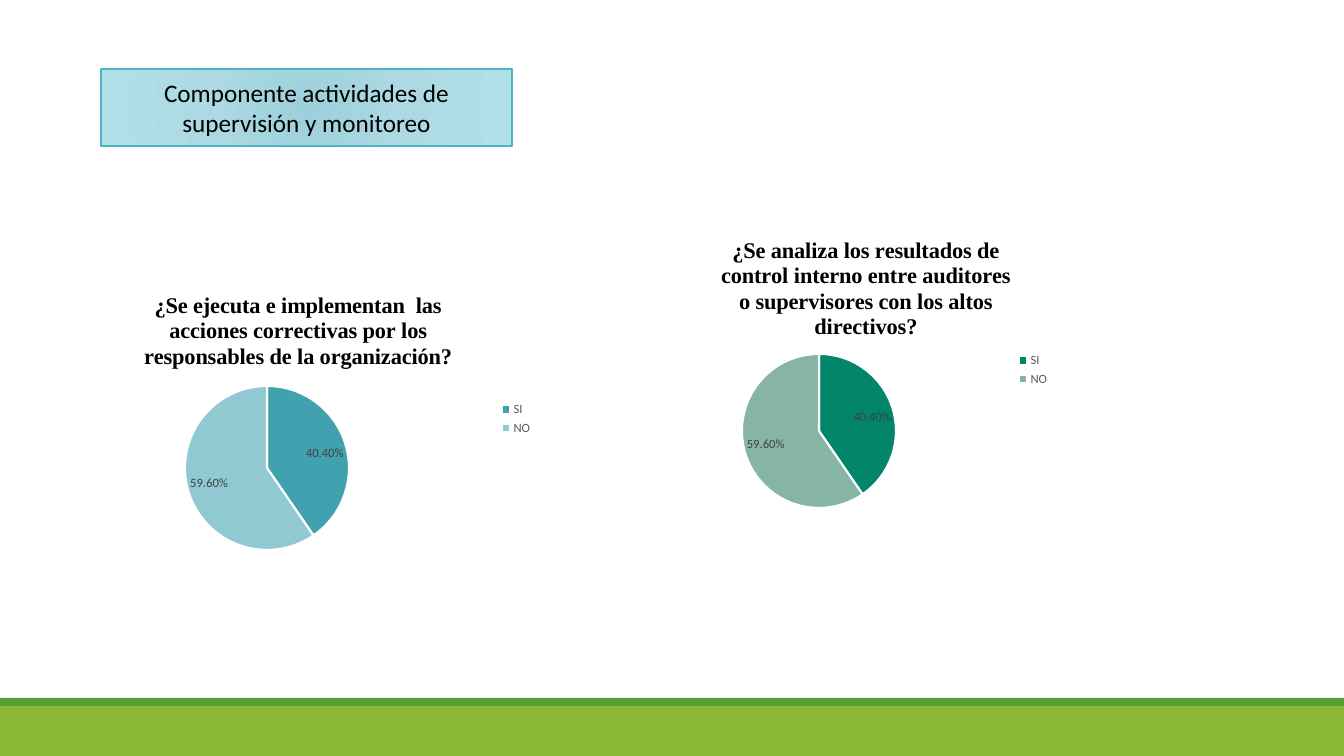
from lxml import etree
from pptx import Presentation
from pptx.chart.data import CategoryChartData
from pptx.dml.color import RGBColor
from pptx.enum.chart import XL_CHART_TYPE, XL_LABEL_POSITION, XL_LEGEND_POSITION
from pptx.enum.shapes import MSO_SHAPE
from pptx.enum.text import MSO_ANCHOR, PP_ALIGN
from pptx.oxml import parse_xml
from pptx.oxml.ns import nsdecls, qn
from pptx.util import Emu, Pt

PIE, RECTANGLE = XL_CHART_TYPE.PIE, MSO_SHAPE.RECTANGLE
BEST_FIT, RIGHT = XL_LABEL_POSITION.BEST_FIT, XL_LEGEND_POSITION.RIGHT
CENTER, MIDDLE = PP_ALIGN.CENTER, MSO_ANCHOR.MIDDLE
EMU_PER_PX = 914400 / 100.8

PAGE_SIZE = (1344, 756)
BANDS = [((0, 706, 1344, 50), "8AB833"), ((0, 698, 1344, 8), "549E39")]
HEADING = "Componente actividades de supervisión y monitoreo"
HEADING_BOX = (101, 69, 411, 77)
HEADING_STOPS = [(0, "9CD0DA"), (45, "ACD9E2"), (100, "B2E0E9")]
HEADING_LINE = "4AB5C4"

ANSWERS = {"SI": 0.404, "NO": 0.596}
CHARTS = [
    {
        "question": "¿Se ejecuta e implementan  las acciones correctivas "
                    "por los responsables de la organización?",
        "frame": (80, 271, 462, 294),
        "title_at": (140, 287),
        "pie": (185, 386, 164, 164),
        "legend_at": (498, 398),
        "colors": ("42A1AE", "91C9D3"),
    },
    {
        "question": "¿Se analiza los resultados de control interno entre "
                    "auditores o supervisores con los altos directivos?",
        "frame": (667, 215, 390, 308),
        "title_at": (717, 232),
        "pie": (742, 354, 154, 154),
        "legend_at": (1015, 349),
        "colors": ("028569", "87B5A4"),
    },
]
FONTS = {
    "heading": {"name": "Calibri", "size": 18, "color": "000000", "bold": False},
    "chart": {"name": "Calibri", "size": 10, "color": "000000", "bold": False},
    "title": {"name": "Times New Roman", "size": 16, "color": "000000", "bold": True},
    "legend": {"name": "Calibri", "size": 9, "color": "595959", "bold": False},
    "label": {"name": "Calibri", "size": 9, "color": "404040", "bold": False},
}


def px(length):
    return Emu(round(length * EMU_PER_PX))


def rgb(hex_color):
    return RGBColor.from_string(hex_color)


def set_font(font, role):
    for key, value in FONTS[role].items():
        if key == "color":
            font.color.rgb = rgb(value)
        else:
            setattr(font, key, Pt(value) if key == "size" else value)


def add_rectangle(page, box, color):
    shape = page.shapes.add_shape(RECTANGLE, *map(px, box))
    shape.shadow.inherit = False
    shape.fill.solid()
    shape.fill.fore_color.rgb = rgb(color)
    shape.line.fill.background()
    return shape


def set_radial_fill(shape, stops):
    """Replace the solid fill by a gradient that spreads from the centre."""
    marks = "".join(
        f'<a:gs pos="{percent * 1000}"><a:srgbClr val="{color}"/></a:gs>'
        for percent, color in stops)
    gradient = parse_xml(
        f'<a:gradFill {nsdecls("a")} rotWithShape="1"><a:gsLst>{marks}</a:gsLst>'
        '<a:path path="circle"><a:fillToRect l="50000" t="50000" r="50000" b="50000"/>'
        '</a:path></a:gradFill>')
    properties = shape.element.spPr
    properties.replace(properties.find(qn("a:solidFill")), gradient)


def add_heading(page):
    box = add_rectangle(page, HEADING_BOX, HEADING_STOPS[0][1])
    set_radial_fill(box, HEADING_STOPS)
    box.line.color.rgb = rgb(HEADING_LINE)
    box.line.width = Pt(1)
    frame = box.text_frame
    frame.word_wrap = True
    frame.vertical_anchor = MIDDLE
    para = frame.paragraphs[0]
    para.alignment = CENTER
    span = para.add_run()
    span.text = HEADING
    set_font(span.font, "heading")


def place(part, after, box, frame):
    """Fix a chart part at page coordinates, after the child of the given tag."""
    for old in part.findall(qn("c:layout")):
        part.remove(old)
    left, top, width, height = frame
    values = [(box[0] - left) / width, (box[1] - top) / height]
    if len(box) == 4:
        values += [box[2] / width, box[3] / height]
    layout = etree.Element(qn("c:layout"))
    manual = etree.SubElement(layout, qn("c:manualLayout"))
    settings = [("xMode", "edge"), ("yMode", "edge")]
    if len(box) == 4:
        settings.insert(0, ("layoutTarget", "inner"))
    settings += [(name, f"{value:.4f}") for name, value in zip("xywh", values)]
    for name, value in settings:
        etree.SubElement(manual, qn(f"c:{name}")).set("val", value)
    previous = part.find(qn(after)) if after else None
    part.insert(0 if previous is None else part.index(previous) + 1, layout)


def add_pie(page, content):
    data = CategoryChartData(number_format="0.00%")
    data.categories = list(ANSWERS)
    data.add_series("Series 1", list(ANSWERS.values()))
    frame = content["frame"]
    chart = page.shapes.add_chart(PIE, *map(px, frame), data).chart
    set_font(chart.font, "chart")

    chart.has_title = True
    para = chart.chart_title.text_frame.paragraphs[0]
    span = para.add_run()
    span.text = content["question"]
    set_font(span.font, "title")

    chart.has_legend = True
    legend = chart.legend
    legend.position = RIGHT
    legend.include_in_layout = False
    set_font(legend.font, "legend")

    plot = chart.plots[0]
    plot.vary_by_categories = True
    series = plot.series[0]
    for index, color in enumerate(content["colors"]):
        look = series.points[index].format
        look.fill.solid()
        look.fill.fore_color.rgb = rgb(color)
        look.line.color.rgb = rgb("FFFFFF")
        look.line.width = Pt(1.5)
    labels = series.data_labels
    options = {"show_value": True, "show_percentage": False, "position": BEST_FIT,
               "number_format": "0.00%", "number_format_is_linked": False}
    for name, value in options.items():
        setattr(labels, name, value)
    set_font(labels.font, "label")

    root = chart.element.find(qn("c:chart"))
    for tag, after, key in (("c:title", "c:tx", "title_at"),
                            ("c:plotArea", None, "pie"),
                            ("c:legend", "c:legendPos", "legend_at")):
        place(root.find(qn(tag)), after, content[key], frame)


def main():
    deck = Presentation()
    deck.slide_width, deck.slide_height = map(px, PAGE_SIZE)
    page = deck.slides.add_slide(deck.slide_layouts[6])
    for box, color in BANDS:
        add_rectangle(page, box, color)
    add_heading(page)
    for content in CHARTS:
        add_pie(page, content)
    deck.save("out.pptx")


if __name__ == "__main__":
    main()
